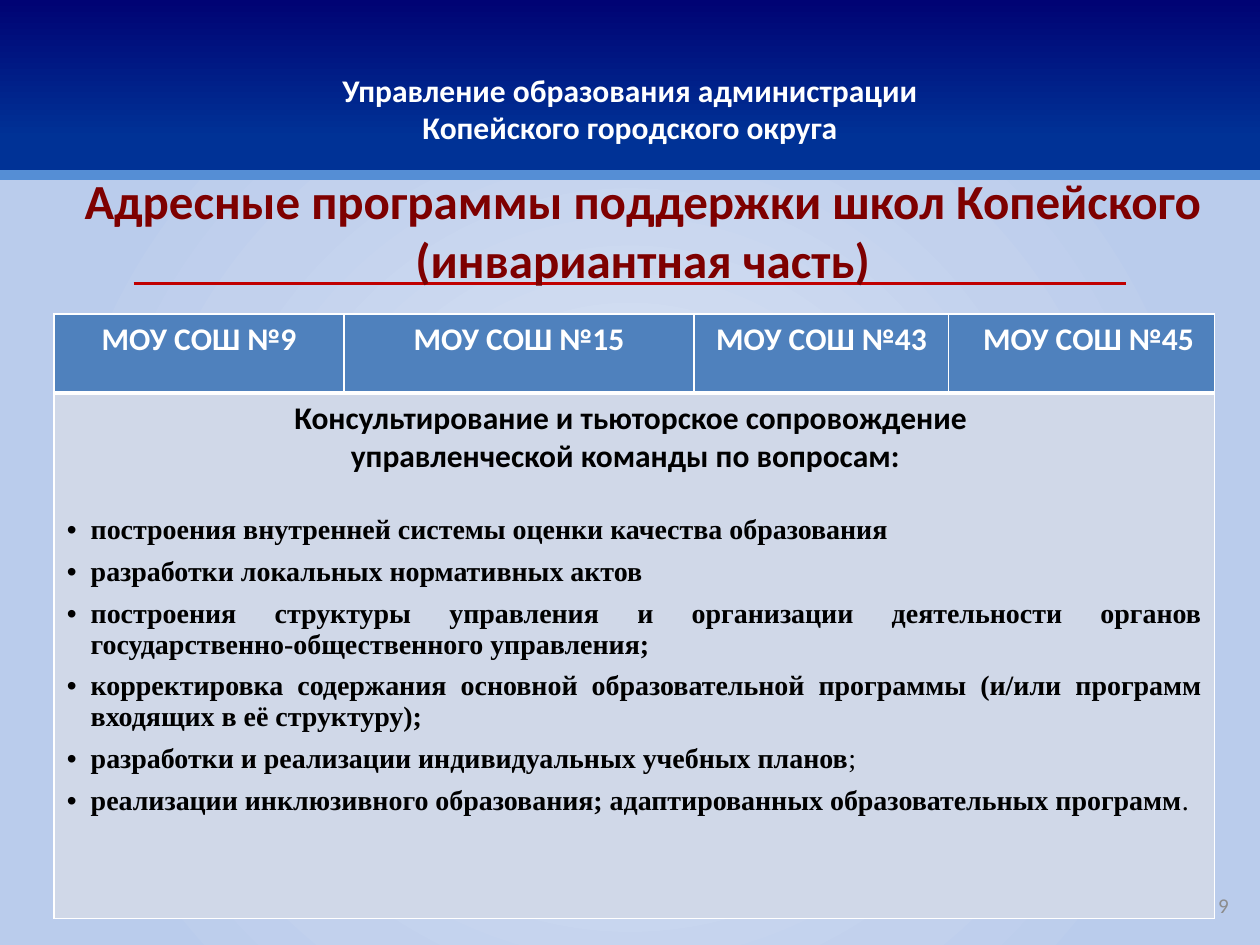
from lxml import etree
from pptx import Presentation
from pptx.dml.color import RGBColor
from pptx.enum import shapes, text
from pptx.oxml import parse_xml
from pptx.oxml.ns import nsdecls, qn
from pptx.util import Inches, Pt

COLORS = {
    "white": "FFFFFF", "black": "000000", "title": "7E0000", "number": "8C8C8C",
    "band": "558ED5", "rule": "C00000", "head": "4F81BD", "body": "D0D8E8",
}
HEADER_STOPS = [(0, "000374"), (79, "003296")]
BACK_STOPS = [(0, "E1E8F5"), (62, "C2D1ED"), (83, "BACCEC")]
LINEAR = '<a:lin ang="5400000" scaled="0"/>'
RADIAL = ('<a:path path="circle"><a:fillToRect l="50000" t="50000" '
          'r="50000" b="50000"/></a:path>')
CENTER = text.PP_ALIGN.CENTER

SCHOOLS = ["МОУ СОШ №9", "МОУ СОШ №15", "МОУ СОШ №43", "МОУ СОШ №45"]
COL_WIDTHS = [2.3, 2.78, 2.02, 2.11]
ROW_HEIGHTS = [0.63, 4.17]
HEADINGS = ["Консультирование и тьюторское сопровождение ",
            "управленческой команды по вопросам: \t"]
TOPICS = [
    ("построения внутренней системы оценки качества образования", ""),
    ("разработки локальных нормативных актов", ""),
    ("построения структуры управления и организации деятельности органов "
     "государственно-общественного управления;", ""),
    ("корректировка содержания основной образовательной программы "
     "(и/или программ входящих в её структуру);", ""),
    ("разработки и реализации индивидуальных учебных планов", ";"),
    ("реализации инклюзивного образования; адаптированных образовательных программ", "."),
]


def rgb(name):
    return RGBColor.from_string(COLORS[name])


def style(p, size, color, bold=True, align=CENTER, name="Calibri"):
    p.alignment = align
    for r in p.runs:
        f = r.font
        f.size, f.bold, f.name = Pt(size), bold, name
        f.color.rgb = rgb(color)


def add_panel(s, top, height, stops, direction):
    sp = s.shapes.add_shape(shapes.MSO_SHAPE.RECTANGLE, 0, Inches(top),
                            Inches(10), Inches(height))
    sp.shadow.inherit = False
    sp.line.fill.background()
    gs = "".join(f'<a:gs pos="{pos * 1000}"><a:srgbClr val="{c}"/></a:gs>'
                 for pos, c in stops)
    grad = parse_xml(f'<a:gradFill {nsdecls("a")} rotWithShape="1">'
                     f'<a:gsLst>{gs}</a:gsLst>{direction}</a:gradFill>')
    sp._element.spPr.find(qn("a:prstGeom")).addnext(grad)
    return sp


def add_rule(s, x1, x2, y, color, width):
    line = s.shapes.add_connector(shapes.MSO_CONNECTOR.STRAIGHT, Inches(x1),
                                  Inches(y), Inches(x2), Inches(y))
    line.line.color.rgb = rgb(color)
    line.line.width = Pt(width)
    etree.SubElement(line._element.spPr, qn("a:effectLst"))


def add_text(s, box, content, size, color, bold, align):
    tf = s.shapes.add_textbox(*map(Inches, box)).text_frame
    tf.word_wrap = True
    tf.vertical_anchor = text.MSO_ANCHOR.MIDDLE
    tf.text = content
    style(tf.paragraphs[0], size, color, bold, align)


def format_cell(cell, fill, bottom=1):
    tcPr = cell._tc.get_or_add_tcPr()
    for side, width in (("L", 1), ("R", 1), ("T", 1), ("B", bottom)):
        tcPr.append(parse_xml(
            f'<a:ln{side} {nsdecls("a")} w="{Pt(width)}"><a:solidFill>'
            f'<a:srgbClr val="{COLORS["white"]}"/></a:solidFill></a:ln{side}>'))
    cell.fill.solid()
    cell.fill.fore_color.rgb = rgb(fill)


def add_topic(tf, bold_part, plain_part):
    p = tf.add_paragraph()
    pPr = p._p.get_or_add_pPr()
    pPr.set("marL", str(Inches(0.19)))
    pPr.set("indent", str(Inches(-0.19)))
    p.space_after = Pt(6)
    etree.SubElement(pPr, qn("a:buFont")).set("typeface", "Arial")
    etree.SubElement(pPr, qn("a:buChar")).set("char", "•")
    p.text = bold_part
    if plain_part:
        p.add_run().text = plain_part
    style(p, 16, "black", True, text.PP_ALIGN.JUSTIFY, "Times New Roman")
    if plain_part:
        p.runs[-1].font.bold = False


def add_program_table(s):
    table = s.shapes.add_table(2, 4, Inches(0.43), Inches(2.49),
                               Inches(sum(COL_WIDTHS)), Inches(sum(ROW_HEIGHTS))).table
    for col, width in zip(table.columns, COL_WIDTHS):
        col.width = Inches(width)
    for row, height in zip(table.rows, ROW_HEIGHTS):
        row.height = Inches(height)
    for i, school in enumerate(SCHOOLS):
        cell = table.cell(0, i)
        format_cell(cell, "head", 3)
        cell.text = school
        style(cell.text_frame.paragraphs[0], 18, "white")
        format_cell(table.cell(1, i), "body")
    table.cell(0, 3).margin_left = Inches(0.21)

    body = table.cell(1, 0)
    body.merge(table.cell(1, 3))
    tf = body.text_frame
    tf.text = "\n".join(HEADINGS)
    for p in tf.paragraphs:
        style(p, 18, "black")
    tf.paragraphs[-1].space_after = Pt(22)
    for topic in TOPICS:
        add_topic(tf, *topic)


def main():
    prs = Presentation()
    prs.slide_width, prs.slide_height = Inches(10), Inches(7.5)
    s = prs.slides.add_slide(prs.slide_layouts[6])

    header = add_panel(s, 0, 1.39, HEADER_STOPS, LINEAR)
    tf = header.text_frame
    tf.margin_top = Inches(0.38)
    tf.vertical_anchor = text.MSO_ANCHOR.MIDDLE
    tf.text = "Управление образования администрации\vКопейского городского округа"
    style(tf.paragraphs[0], 18, "white")

    add_panel(s, 1.39, 6.11, BACK_STOPS, RADIAL)
    add_rule(s, 0, 10, 1.39, "band", 6)
    add_rule(s, 1.06, 8.94, 2.25, "rule", 2.25)
    add_text(s, (0.2, 1.31, 9.8, 1.02),
             "Адресные программы поддержки школ Копейского (инвариантная часть)",
             28, "title", True, CENTER)
    add_program_table(s)
    add_text(s, (7.52, 6.98, 2.33, 0.4), "9", 12, "number", False,
             text.PP_ALIGN.RIGHT)
    prs.save("out.pptx")


if __name__ == "__main__":
    main()
